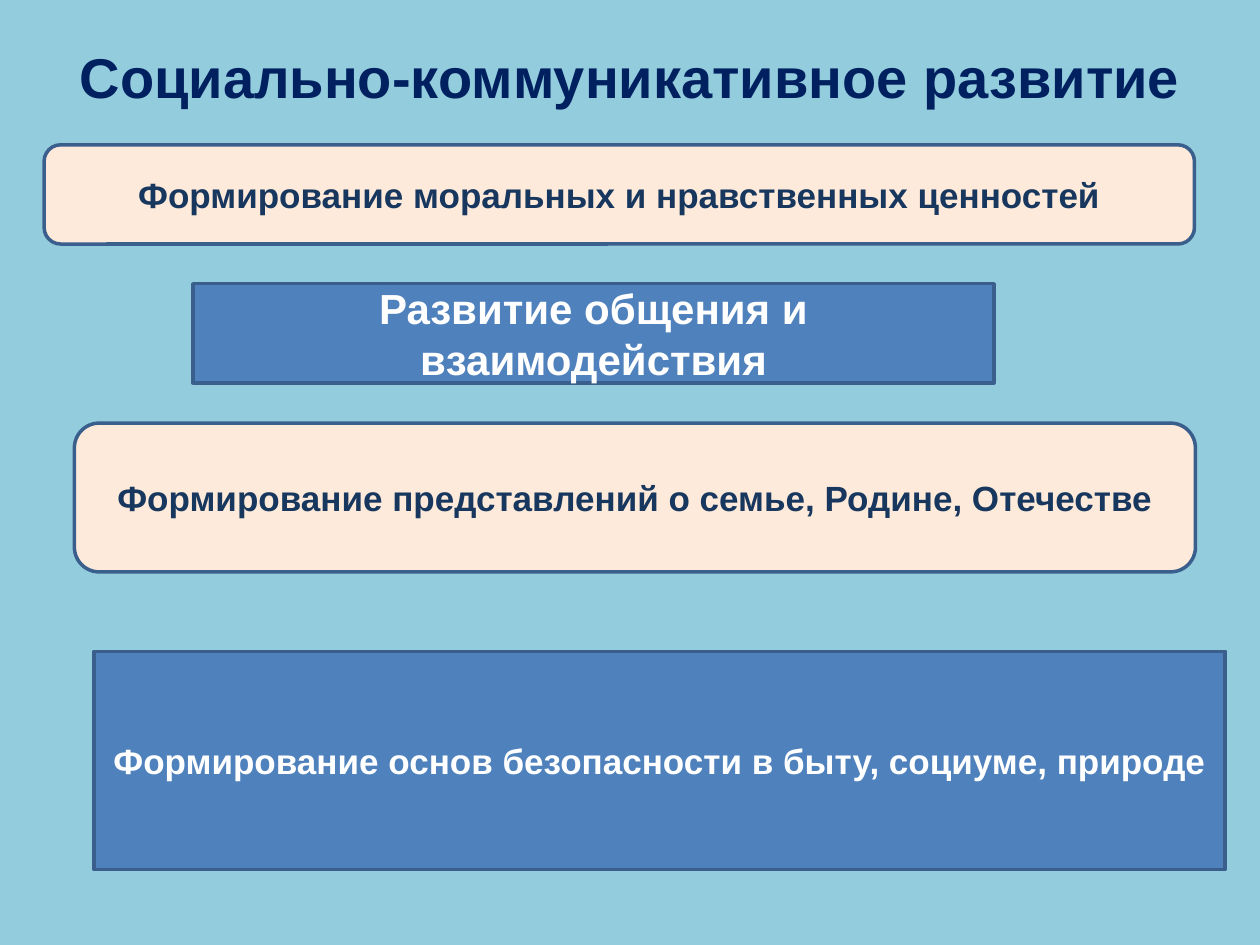
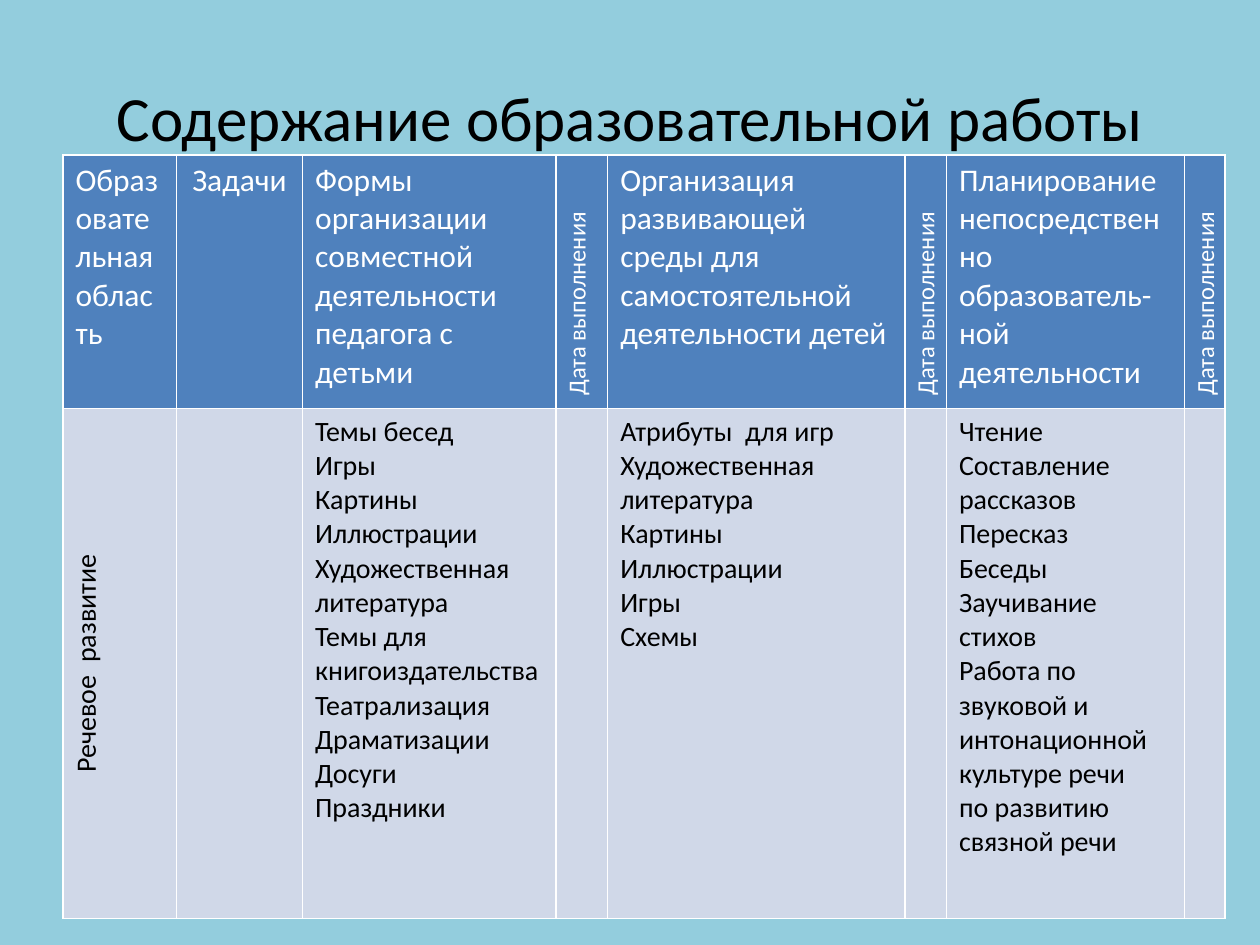
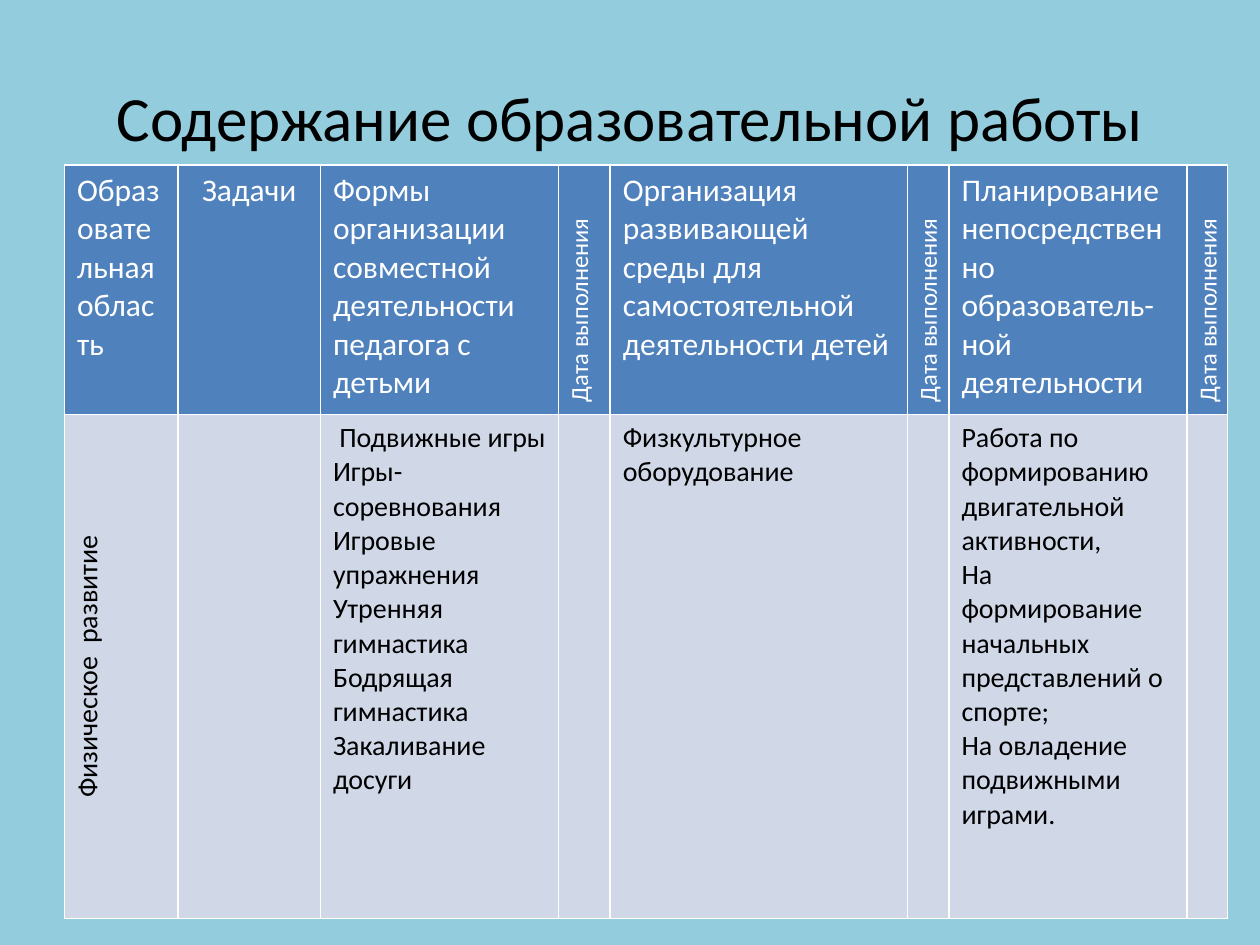
"""Builds three slides on planning educational work in a kindergarten."""
from dataclasses import dataclass

from lxml.etree import SubElement
from pptx import Presentation
from pptx.dml.color import RGBColor
from pptx.enum.shapes import MSO_SHAPE
from pptx.enum.text import MSO_ANCHOR, MSO_AUTO_SIZE, PP_ALIGN
from pptx.oxml.ns import qn
from pptx.presentation import Presentation as Deck
from pptx.slide import Slide
from pptx.table import _Cell
from pptx.text.text import TextFrame
from pptx.util import Cm, Pt

SKY = RGBColor(0x93, 0xCD, 0xDD)
BLUE = RGBColor(0x4F, 0x81, 0xBD)
OUTLINE = RGBColor(0x3A, 0x5F, 0x8C)
PEACH = RGBColor(0xFD, 0xEA, 0xDA)
PALE = RGBColor(0xD0, 0xD8, 0xE8)
NAVY = RGBColor(0x00, 0x20, 0x60)
INK = RGBColor(0x17, 0x37, 0x5E)
WHITE = RGBColor(0xFF, 0xFF, 0xFF)
BLACK = RGBColor(0x00, 0x00, 0x00)

DUE = "Дата выполнения"
HEADERS = [
    "Образовательная область",
    "Задачи",
    "Формы организации совместной деятельности педагога с детьми",
    DUE,
    "Организация развивающей среды для самостоятельной деятельности детей",
    DUE,
    "Планирование непосредственно образователь-ной деятельности",
    DUE,
]
TASKS_COL = 1
AREA_COL, FORMS_COL, SETTING_COL, LESSONS_COL = 0, 2, 4, 6


@dataclass(frozen=True)
class BoxStyle:
    """Look shared by one kind of box."""
    shape: MSO_SHAPE
    fill: RGBColor
    color: RGBColor


@dataclass(frozen=True)
class Box:
    """Labelled box with its place in centimetres."""
    text: str
    left: float
    top: float
    width: float
    height: float
    style: BoxStyle
    size: int = 20


@dataclass(frozen=True)
class Plan:
    """Planning table of one educational area, in centimetres."""
    area: str
    forms: list[str]
    setting: list[str]
    lessons: list[str]
    left: float
    top: float
    tasks_width: float
    forms_width: float
    rows: tuple[float, float]


ROUNDED = BoxStyle(MSO_SHAPE.ROUNDED_RECTANGLE, PEACH, INK)
PLAIN = BoxStyle(MSO_SHAPE.RECTANGLE, BLUE, WHITE)

BOXES = [
    Box("Формирование моральных и нравственных ценностей",
        0.89, 2.92, 23.19, 2, ROUNDED),
    Box("Развитие общения и взаимодействия",
        3.89, 5.72, 16.15, 2, PLAIN, 24),
    Box("Формирование представлений о семье, Родине, Отечестве",
        1.5, 8.53, 22.6, 3, ROUNDED),
    Box("Формирование основ безопасности в быту, социуме, природе",
        1.9, 13.13, 22.8, 4.4, PLAIN),
]

PLANS = [
    Plan(
        "Речевое  развитие",
        ["Темы бесед", "Игры", "Картины", "Иллюстрации",
         "Художественная литература", "Темы для книгоиздательства",
         "Театрализация", "Драматизации", "Досуги", "Праздники"],
        ["Атрибуты  для игр", "Художественная литература", "Картины",
         "Иллюстрации", "Игры", "Схемы"],
        ["Чтение", "Составление рассказов", "Пересказ", "Беседы",
         "Заучивание стихов",
         "Работа по звуковой и интонационной культуре речи",
         "по развитию связной речи"],
        1.27, 3.12, 2.54, 5.11, (5.11, 10.29)),
    Plan(
        "Физическое  развитие",
        [" Подвижные игры", "Игры-соревнования", "Игровые упражнения",
         "Утренняя гимнастика", "Бодрящая гимнастика", "Закаливание",
         "досуги"],
        ["Физкультурное оборудование"],
        ["Работа по формированию двигательной активности,",
         "На формирование начальных представлений о спорте;",
         "На овладение подвижными играми."],
        1.3, 3.33, 2.87, 4.8, (5.03, 10.16)),
]


def style_text(tf: TextFrame, font: str, size: int, color: RGBColor,
               align: PP_ALIGN, bold: bool = False) -> None:
    """Format every paragraph of a text frame alike."""
    for p in tf.paragraphs:
        p.alignment = align
        p.font.name = font
        p.font.size = Pt(size)
        p.font.bold = bold
        p.font.color.rgb = color


def add_titled_slide(prs: Deck, text: str, height: float, font: str,
                     size: int, color: RGBColor, bold: bool = False) -> Slide:
    """Add a title-only slide and place and format its title."""
    slide = prs.slides.add_slide(prs.slide_layouts[5])
    sp = slide.shapes.title
    sp.left, sp.top, sp.width, sp.height = Cm(1.27), Cm(0.76), Cm(22.86), Cm(height)
    tf = sp.text_frame
    tf.text = text
    tf.word_wrap = True
    tf.auto_size = MSO_AUTO_SIZE.NONE
    tf.vertical_anchor = MSO_ANCHOR.MIDDLE
    style_text(tf, font, size, color, PP_ALIGN.CENTER, bold)
    return slide


def add_box(slide: Slide, box: Box) -> None:
    """Draw one labelled box."""
    sp = slide.shapes.add_shape(box.style.shape, Cm(box.left), Cm(box.top),
                                Cm(box.width), Cm(box.height))
    sp.shadow.inherit = False
    sp.fill.solid()
    sp.fill.fore_color.rgb = box.style.fill
    sp.line.color.rgb = OUTLINE
    sp.line.width = Pt(2)
    tf = sp.text_frame
    tf.text = box.text
    tf.word_wrap = True
    tf.vertical_anchor = MSO_ANCHOR.MIDDLE
    style_text(tf, "Arial", box.size, box.style.color, PP_ALIGN.CENTER, True)


def fill_cell(cell: _Cell, text: str, size: int, color: RGBColor,
              fill: RGBColor, centred: bool, vertical: bool) -> None:
    """Write a table cell with white borders and a solid fill."""
    cell.text_frame.text = text
    align = PP_ALIGN.CENTER if centred else PP_ALIGN.LEFT
    style_text(cell.text_frame, "Calibri", size, color, align)
    tcPr = cell._tc.get_or_add_tcPr()
    if vertical:
        tcPr.set("vert", "vert270")
    for side in ("a:lnL", "a:lnR", "a:lnT", "a:lnB"):
        ln = SubElement(tcPr, qn(side), w=str(Pt(1)))
        solid = SubElement(ln, qn("a:solidFill"))
        SubElement(solid, qn("a:srgbClr"), val=str(WHITE))
    cell.fill.solid()
    cell.fill.fore_color.rgb = fill


def add_plan(slide: Slide, plan: Plan) -> None:
    """Draw the planning table of one educational area."""
    widths = [2.29, plan.tasks_width, plan.forms_width, 1.04, 5.99, 0.84, 4.8, 0.81]
    table = slide.shapes.add_table(
        2, len(widths), Cm(plan.left), Cm(plan.top),
        Cm(sum(widths)), Cm(sum(plan.rows))).table
    table.first_row = table.horz_banding = False
    for row, height in zip(table.rows, plan.rows):
        row.height = Cm(height)
    content = {AREA_COL: [plan.area], FORMS_COL: plan.forms,
               SETTING_COL: plan.setting, LESSONS_COL: plan.lessons}
    for i, (width, header) in enumerate(zip(widths, HEADERS)):
        table.columns[i].width = Cm(width)
        is_due = header == DUE
        fill_cell(table.cell(0, i), header, 14 if is_due else 18, WHITE, BLUE,
                  i == TASKS_COL, is_due)
        is_area = i == AREA_COL
        fill_cell(table.cell(1, i), "\n".join(content.get(i, [])), 16, BLACK,
                  PALE, is_area, is_area)


def main() -> None:
    """Build and save the presentation."""
    prs = Presentation()
    prs.slide_width, prs.slide_height = Cm(25.4), Cm(19.05)
    background = prs.slide_master.background.fill
    background.solid()
    background.fore_color.rgb = SKY

    slide = add_titled_slide(prs, "Социально-коммуникативное развитие", 1.55,
                             "Arial", 32, NAVY, True)
    for box in BOXES:
        add_box(slide, box)

    for plan in PLANS:
        slide = add_titled_slide(prs, "Содержание образовательной работы", 3.18,
                                 "Calibri", 36, BLACK)
        add_plan(slide, plan)

    prs.save("out.pptx")


if __name__ == "__main__":
    main()
